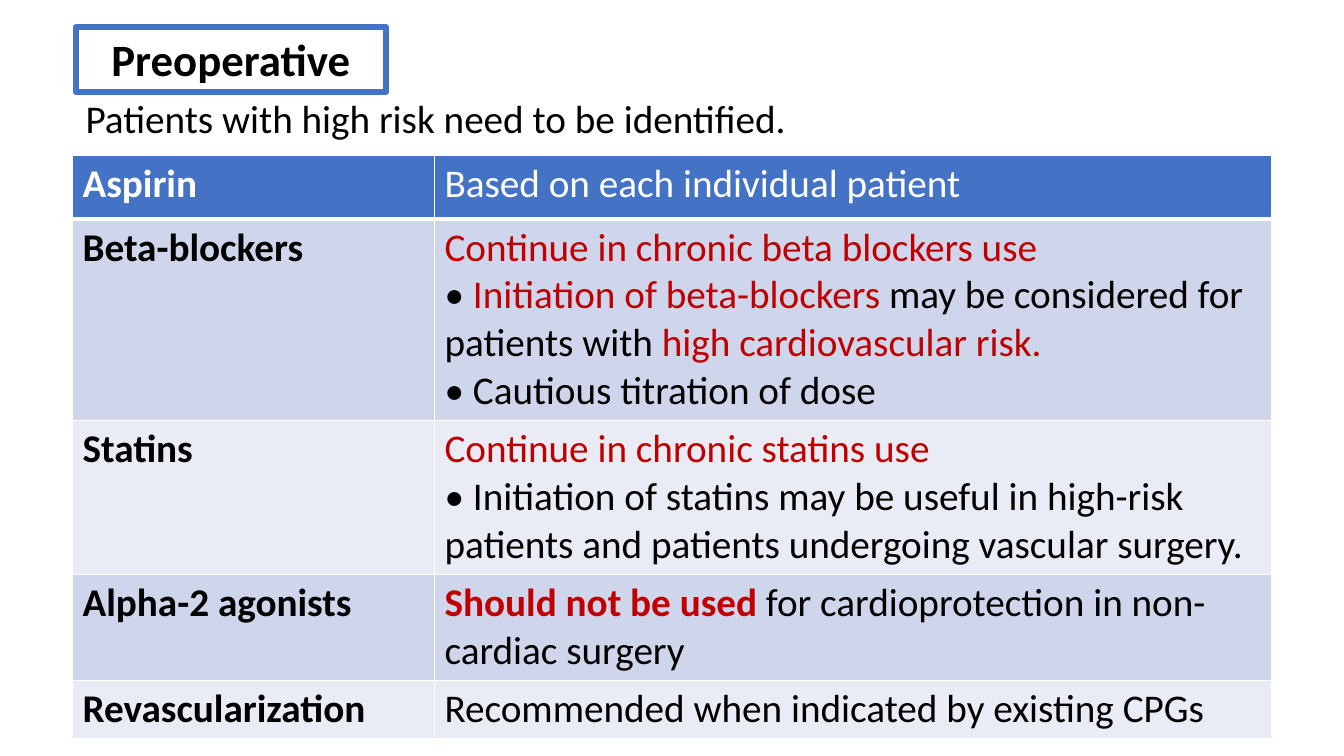
from dataclasses import dataclass

from lxml.etree import SubElement
from pptx import Presentation
from pptx.dml.color import RGBColor
from pptx.enum.shapes import MSO_SHAPE as Preset
from pptx.enum.text import MSO_ANCHOR as Anchor, PP_ALIGN as Align
from pptx.oxml.ns import qn
from pptx.slide import Slide
from pptx.table import _Cell as Cell
from pptx.text.text import TextFrame
from pptx.util import Inches, Pt

SLIDE_WIDTH, SLIDE_HEIGHT = Inches(13.33), Inches(7.5)
FONT = "Calibri"
BLUE, RED, BLACK, WHITE = "4472C4", "C00000", "000000", "FFFFFF"
BANDS = ("CFD5EA", "E9EBF5")

# Shares of the slide, in percent
TABLE_LEFT, TABLE_TOP = 5.4, 20.53
COLUMN_WIDTHS = (26.93, 62.27)
HEADER_HEIGHT, LINE_HEIGHT, CELL_PADDING = 8.4, 6.33, 1.34


@dataclass(frozen=True)
class Part:
    text: str
    color: str = BLACK
    bold: bool = False


@dataclass(frozen=True)
class Advice:
    treatment: str
    paragraphs: list[list[Part]]
    lines: int


HEADER = Advice("Aspirin", [[Part("Based on each individual patient", WHITE)]], 1)
ADVICE = [
    Advice("Beta-blockers", [
        [Part("Continue in chronic beta blockers use", RED)],
        [Part("• "), Part("Initiation of beta-blockers ", RED),
         Part("may be considered for patients with "),
         Part("high cardiovascular risk.", RED)],
        [Part("• Cautious titration of dose")],
    ], 4),
    Advice("Statins", [
        [Part("Continue in chronic statins use", RED)],
        [Part("• Initiation of statins may be useful in high-risk patients "
              "and patients undergoing vascular surgery.")],
    ], 3),
    Advice("Alpha-2 agonists", [
        [Part("Should not be used ", RED, True),
         Part("for cardioprotection in non-cardiac surgery")],
    ], 2),
    Advice("Revascularization",
           [[Part("Recommended when indicated by existing CPGs")]], 1),
]


def across(percent: float) -> int:
    return round(SLIDE_WIDTH * percent / 100)


def down(percent: float) -> int:
    return round(SLIDE_HEIGHT * percent / 100)


def rgb(color: str) -> RGBColor:
    return RGBColor.from_string(color)


def write(frame: TextFrame, paragraphs: list[list[Part]], *,
          size: float = 28, align: Align = Align.LEFT) -> None:
    frame.word_wrap = True
    for index, parts in enumerate(paragraphs):
        paragraph = frame.add_paragraph() if index else frame.paragraphs[0]
        paragraph.alignment = align
        for part in parts:
            run = paragraph.add_run()
            run.text = part.text
            font = run.font
            font.name, font.size, font.bold = FONT, Pt(size), part.bold
            font.color.rgb = rgb(part.color)


def add_borders(cell: Cell, *, top: float = 1, bottom: float = 1) -> None:
    properties = cell._tc.get_or_add_tcPr()
    for side, width in (("L", 1), ("R", 1), ("T", top), ("B", bottom)):
        line = SubElement(properties, qn(f"a:ln{side}"), w=str(Pt(width)))
        fill = SubElement(line, qn("a:solidFill"))
        SubElement(fill, qn("a:srgbClr"), val=WHITE)


def add_heading(slide: Slide) -> None:
    box = slide.shapes.add_shape(Preset.RECTANGLE, across(5.63), down(3.6),
                                 across(23.1), down(8.53))
    box.shadow.inherit = False
    box.fill.background()
    box.line.color.rgb = rgb(BLUE)
    box.line.width = Pt(4.5)
    box.text_frame.vertical_anchor = Anchor.TOP
    write(box.text_frame, [[Part("Preoperative", bold=True)]],
          size=32, align=Align.CENTER)


def add_introduction(slide: Slide) -> None:
    box = slide.shapes.add_textbox(across(5.63), down(11.87),
                                   across(55.96), down(7.6))
    write(box.text_frame, [[Part("Patients with high risk need to be identified.")]])


def add_advice_table(slide: Slide) -> None:
    rows = [HEADER, *ADVICE]
    heights = [HEADER_HEIGHT] + [CELL_PADDING + LINE_HEIGHT * advice.lines
                                 for advice in ADVICE]
    table = slide.shapes.add_table(
        len(rows), len(COLUMN_WIDTHS), across(TABLE_LEFT), down(TABLE_TOP),
        across(sum(COLUMN_WIDTHS)), down(sum(heights))).table
    for column, width in zip(table.columns, COLUMN_WIDTHS):
        column.width = across(width)
    for index, (advice, height) in enumerate(zip(rows, heights)):
        table.rows[index].height = down(height)
        is_header = index == 0
        label = Part(advice.treatment, WHITE if is_header else BLACK, True)
        for column, paragraphs in enumerate(([[label]], advice.paragraphs)):
            cell = table.cell(index, column)
            add_borders(cell, top=3 if index == 1 else 1,
                        bottom=3 if is_header else 1)
            cell.fill.solid()
            cell.fill.fore_color.rgb = rgb(BLUE if is_header
                                           else BANDS[(index - 1) % 2])
            write(cell.text_frame, paragraphs)


def main() -> None:
    presentation = Presentation()
    presentation.slide_width, presentation.slide_height = SLIDE_WIDTH, SLIDE_HEIGHT
    slide = presentation.slides.add_slide(presentation.slide_layouts[6])
    add_advice_table(slide)
    add_heading(slide)
    add_introduction(slide)
    presentation.save("out.pptx")


if __name__ == "__main__":
    main()
